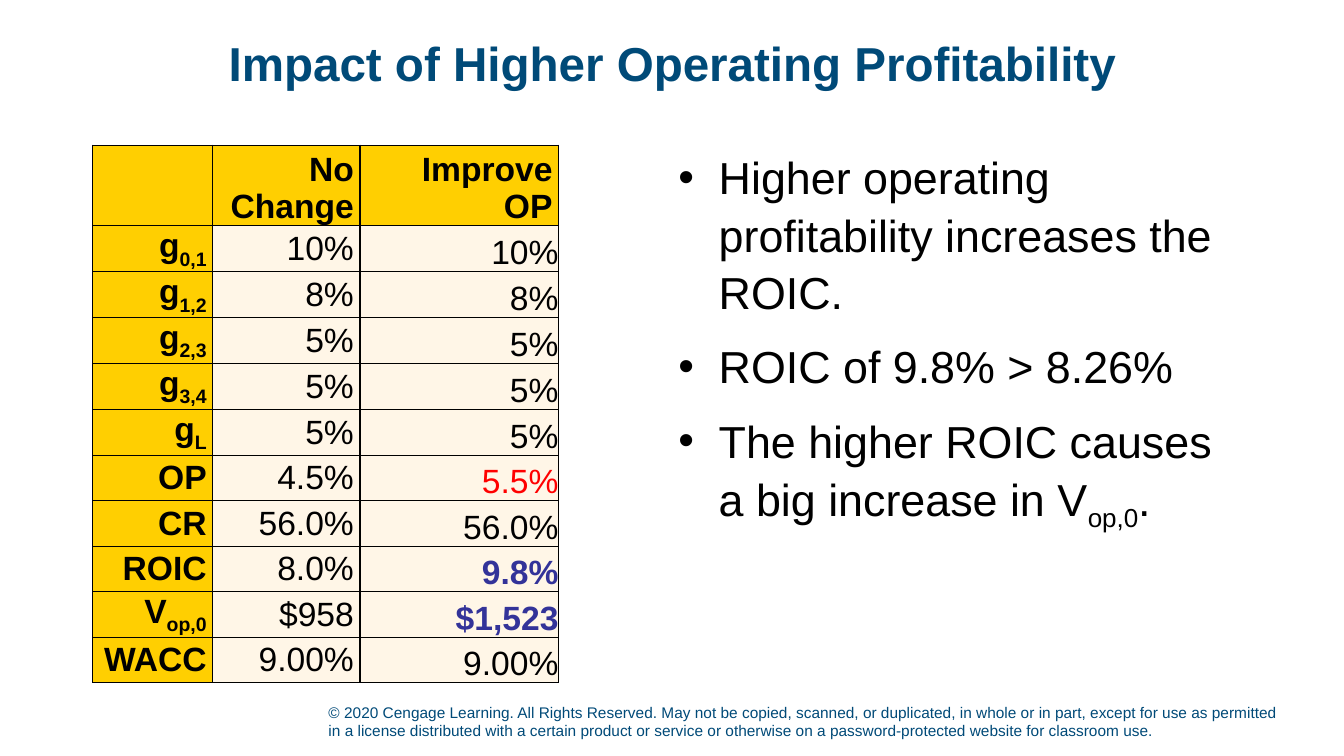
from dataclasses import dataclass

from lxml import etree
from pptx import Presentation
from pptx import util as u
from pptx.dml.color import RGBColor
from pptx.enum import text
from pptx.oxml import ns

# Content: each label or phrase is (text, subscript, text after it)
TITLE = "Impact of Higher Operating Profitability"
HEADER = ("", "No Change", "Improve OP")
MEASURES = [
    (("g", "0,1"), "10%", "10%"),
    (("g", "1,2"), "8%", "8%"),
    (("g", "2,3"), "5%", "5%"),
    (("g", "3,4"), "5%", "5%"),
    (("g", "L"), "5%", "5%"),
    (("OP",), "4.5%", "5.5%"),
    (("CR",), "56.0%", "56.0%"),
    (("ROIC",), "8.0%", "9.8%"),
    (("V", "op,0"), "$958", "$1,523"),
    (("WACC",), "9.00%", "9.00%"),
]
POINTS = [
    ("Higher operating profitability increases the ROIC.",),
    ("ROIC of 9.8% > 8.26%",),
    ("The higher ROIC causes a big increase in V", "op,0", "."),
]
COPYRIGHT = (
    "© 2020 Cengage Learning. All Rights Reserved. May not be copied, scanned, "
    "or duplicated, in whole or in part, except for use as permitted in a license "
    "distributed with a certain product or service or otherwise on a "
    "password-protected website for classroom use."
)


@dataclass(frozen=True)
class Theme:
    font: str = "Arial"
    heading: str = "004A78"
    ink: str = "000000"
    gold: str = "FFCF01"
    cream: str = "FFF6E7"
    changed: str = "FF0000"
    result: str = "333399"
    title_size: int = 34
    body_size: int = 32
    table_size: int = 24
    small_size: int = 11


THEME = Theme()
# Colour and weight of the figures that stand out
EMPHASIS = {
    "5.5%": (THEME.changed, False),
    "9.8%": (THEME.result, True),
    "$1,523": (THEME.result, True),
}
COLUMN_WIDTHS = (1.19, 1.46, 1.97)
HEADER_HEIGHT, ROW_HEIGHT = 0.74, 0.45


def write(paragraph, parts, size, color=THEME.ink, bold=False):
    """Fill a paragraph with parts; every second part is a subscript."""
    for index, part in enumerate(parts):
        run = paragraph.add_run()
        run.text = part
        run.font.name = THEME.font
        run.font.size = u.Pt(size)
        run.font.bold = bold
        run.font.color.rgb = RGBColor.from_string(color)
        if index % 2:
            run._r.get_or_add_rPr().set("baseline", "-25000")


def add_border(cell):
    properties = cell._tc.get_or_add_tcPr()
    for position, side in enumerate(("lnL", "lnR", "lnT", "lnB")):
        line = etree.Element(ns.qn(f"a:{side}"), w=str(u.Pt(1)))
        fill = etree.SubElement(line, ns.qn("a:solidFill"))
        etree.SubElement(fill, ns.qn("a:srgbClr"), val=THEME.ink)
        properties.insert(position, line)


def style_cell(cell, parts, fill, anchor, inset=0.06, color=THEME.ink, bold=False):
    cell.fill.solid()
    cell.fill.fore_color.rgb = RGBColor.from_string(fill)
    add_border(cell)
    cell.vertical_anchor = anchor
    cell.margin_left = cell.margin_right = u.Inches(inset)
    cell.margin_top = cell.margin_bottom = 0
    paragraph = cell.text_frame.paragraphs[0]
    paragraph.alignment = text.PP_ALIGN.RIGHT
    write(paragraph, parts, THEME.table_size, color, bold)


def add_bullet(paragraph):
    properties = paragraph._p.get_or_add_pPr()
    properties.set("marL", str(u.Inches(0.4)))
    properties.set("indent", str(u.Inches(-0.4)))
    etree.SubElement(properties, ns.qn("a:buFont"), typeface=THEME.font)
    etree.SubElement(properties, ns.qn("a:buChar"), char="•")


def add_text_frame(slide, left, top, width, height):
    box = slide.shapes.add_textbox(*map(u.Inches, (left, top, width, height)))
    box.text_frame.word_wrap = True
    return box.text_frame


def add_title(slide):
    title = slide.shapes.title
    title.left, title.top = u.Inches(0.92), u.Inches(0.15)
    title.width, title.height = u.Inches(11.5), u.Inches(1)
    title.text_frame.vertical_anchor = text.MSO_ANCHOR.MIDDLE
    paragraph = title.text_frame.paragraphs[0]
    paragraph.alignment = text.PP_ALIGN.CENTER
    paragraph.line_spacing = 0.95
    write(paragraph, (TITLE,), THEME.title_size, THEME.heading, bold=True)


def add_comparison(slide):
    height = HEADER_HEIGHT + ROW_HEIGHT * len(MEASURES)
    table = slide.shapes.add_table(
        len(MEASURES) + 1, len(HEADER), u.Inches(0.92), u.Inches(1.44),
        u.Inches(sum(COLUMN_WIDTHS)), u.Inches(height),
    ).table
    table.first_row = table.horz_banding = False
    for column, width in zip(table.columns, COLUMN_WIDTHS):
        column.width = u.Inches(width)
    for index, row in enumerate(table.rows):
        row.height = u.Inches(ROW_HEIGHT if index else HEADER_HEIGHT)

    middle, bottom = text.MSO_ANCHOR.MIDDLE, text.MSO_ANCHOR.BOTTOM
    for column, heading in enumerate(HEADER):
        parts = (heading,) if heading else ()
        style_cell(table.cell(0, column), parts, THEME.gold, bottom, bold=True)
    for row, (label, base, improved) in enumerate(MEASURES, start=1):
        style_cell(table.cell(row, 0), label, THEME.gold, middle, bold=True)
        style_cell(table.cell(row, 1), (base,), THEME.cream, middle)
        color, bold = EMPHASIS.get(improved, (THEME.ink, False))
        style_cell(table.cell(row, 2), (improved,), THEME.cream, bottom, 0, color, bold)


def add_points(slide):
    frame = add_text_frame(slide, 6.63, 1.4, 5.78, 5.36)
    for index, point in enumerate(POINTS):
        paragraph = frame.add_paragraph() if index else frame.paragraphs[0]
        add_bullet(paragraph)
        paragraph.line_spacing = 1.07
        paragraph.space_before = u.Pt(6 if index else 0)
        paragraph.space_after = u.Pt(6)
        write(paragraph, point, THEME.body_size)


def add_copyright(slide):
    frame = add_text_frame(slide, 3.16, 6.89, 9.63, 0.5)
    frame.vertical_anchor = text.MSO_ANCHOR.BOTTOM
    write(frame.paragraphs[0], (COPYRIGHT,), THEME.small_size, THEME.heading)


def main():
    deck = Presentation()
    deck.slide_width, deck.slide_height = u.Inches(13.33), u.Inches(7.5)
    slide = deck.slides.add_slide(deck.slide_layouts[5])
    add_copyright(slide)
    add_title(slide)
    add_comparison(slide)
    add_points(slide)
    deck.save("out.pptx")


if __name__ == "__main__":
    main()
